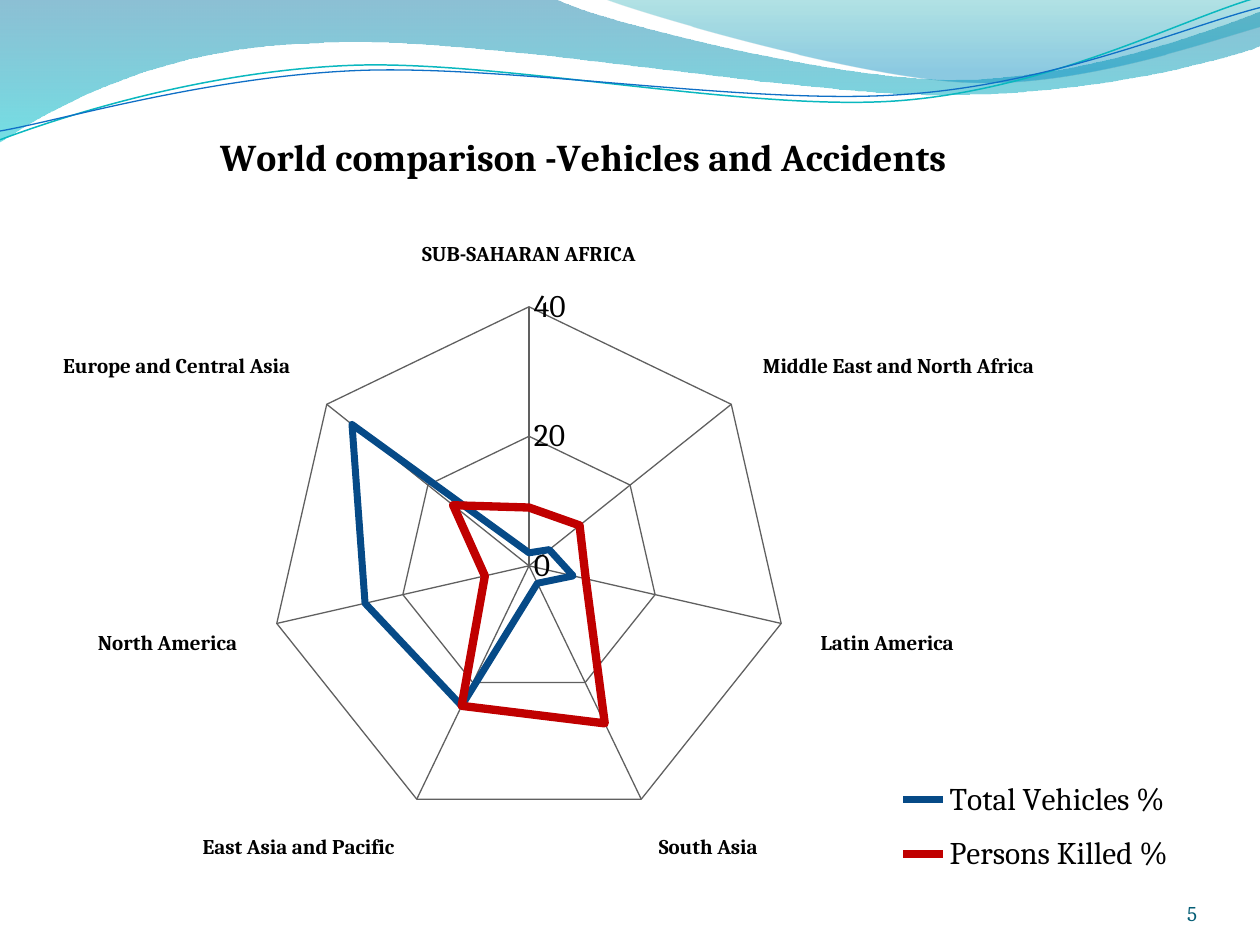
from math import cos, radians, sin
from lxml.etree import SubElement
from pptx import Presentation
from pptx.chart.data import CategoryChartData
from pptx.dml.color import RGBColor
from pptx.enum.chart import XL_CHART_TYPE, XL_LEGEND_POSITION, XL_TICK_MARK
from pptx.enum.text import MSO_ANCHOR, PP_ALIGN
from pptx.oxml import parse_xml
from pptx.oxml.ns import nsdecls, qn
from pptx.util import Cm, Pt

BAND = [(0, 0), (4.4, -0.01), (4.76, 0.17, 6.64, 0.63, 7.58, 0.63),
        (8.53, 0.63, 9.58, 0.26, 10, 0.09), (10.01, 0.36),
        (9.83, 0.44, 8.7, 0.76, 7.46, 0.75), (6.22, 0.75, 3.82, 0.28, 2.57, 0.34),
        (1.29, 0.36, 0.46, 0.83, -0.01, 1.13), (0, 0)]
CREST = [(4.79, -0.01), (5.09, 0.11, 6.82, 0.62, 7.69, 0.65),
         (8.56, 0.69, 9.61, 0.32, 10, 0.21), (10, 0), (4.79, -0.01)]
TEAL = [(0, 1.11), (0.48, 0.93, 1.58, 0.57, 2.77, 0.52),
        (3.95, 0.47, 5.93, 0.89, 7.13, 0.8), (8.33, 0.71, 9.38, 0.15, 9.98, -0.02)]
BLUE = [(0, 1.04), (0.47, 0.96, 1.64, 0.61, 2.83, 0.56),
        (4.03, 0.51, 5.97, 0.84, 7.17, 0.75), (8.36, 0.67, 9.41, 0.21, 10, 0.06)]
AREAS = ["SUB-SAHARAN AFRICA", "Middle East and North Africa ", "Latin America ",
         "South Asia ", "East Asia and Pacific ", "North America",
         "Europe and Central Asia "]
DATA = [("Total Vehicles %", (2, 4, 7, 3, 24, 26, 35), "064A87", 4),
        ("Persons Killed %", (9, 10, 9, 27, 24, 7, 15), "C00000", 4.75)]


def color(code):
    return RGBColor.from_string(code)


def inch(value):
    return Cm(2.54 * value)


def place(node, index, **sizes):
    for old in node.findall(qn("c:layout")):
        node.remove(old)
    layout = parse_xml(f"<c:layout {nsdecls('c')}><c:manualLayout/></c:layout>")
    for tag, value in sizes.items():
        SubElement(layout[0], qn(f"c:{tag}")).set("val", str(value))
    node.insert(index, layout)


class Deck:
    """Hold the style and the current slide."""

    def __init__(self, font="Cambria"):
        self.font = font
        self.show = Presentation()
        self.show.slide_width, self.show.slide_height = Cm(25.4), Cm(19.05)
        self.slide = self.show.slides.add_slide(self.show.slide_layouts[6])

    def style(self, font, size, code="000000", bold=False):
        font.name, font.size, font.bold = self.font, Pt(size), bold
        font.color.rgb = color(code)

    def shape(self, path, box, turn=0, close=False):
        left, top, width, height = box
        pen = self.slide.shapes.build_freeform(inch(left), inch(top))
        pen.add_line_segments([(inch(left + width), inch(top + height))], close=close)
        shape = pen.convert_to_shape()
        shape.shadow.inherit = False
        shape.rotation = turn
        angle = radians(-turn)
        node = next(shape._element.iter(qn("a:path")))
        for old in list(node):
            node.remove(old)
        for index, part in enumerate(path):
            tag = "cubicBezTo" if len(part) == 6 else "lnTo" if index else "moveTo"
            step = SubElement(node, qn(f"a:{tag}"))
            for x, y in zip(part[::2], part[1::2]):
                x, y = x - left - width / 2, y - top - height / 2
                spot = SubElement(step, qn("a:pt"))
                spot.set("x", str(inch(x * cos(angle) - y * sin(angle) + width / 2)))
                spot.set("y", str(inch(x * sin(angle) + y * cos(angle) + height / 2)))
        if close:
            SubElement(node, qn("a:close"))
        return shape

    def wave(self, path, box, stops):
        shape = self.shape(path, box, close=True)
        shape.line.fill.background()
        shape.fill.gradient()
        shape.fill.gradient_angle = 270
        for stop, (spot, code, alpha) in zip(shape.fill.gradient_stops, stops):
            stop.position = spot
            stop.color.rgb = color(code)
            tint = next(stop._gs.iter(qn("a:srgbClr")))
            SubElement(tint, qn("a:alpha")).set("val", str(alpha * 1000))

    def curve(self, path, box, code, width):
        shape = self.shape(path, box, turn=357.3)
        shape.fill.background()
        shape.line.color.rgb = color(code)
        shape.line.width = Pt(width)

    def number(self, text, left, top, width, height):
        frame = self.slide.shapes.add_textbox(
            Cm(left), Cm(top), Cm(width), Cm(height)).text_frame
        frame.word_wrap = True
        frame.vertical_anchor = MSO_ANCHOR.BOTTOM
        frame.margin_left = frame.margin_right = 0
        frame.margin_top = frame.margin_bottom = 0
        frame.text = text
        line = frame.paragraphs[0]
        line.alignment = PP_ALIGN.RIGHT
        self.style(line.runs[0].font, 12, "045D75")

    def radar(self, title, areas, rows, left, top, width, height):
        data = CategoryChartData()
        data.categories = areas
        for name, values, *_ in rows:
            data.add_series(name, values)
        chart = self.slide.shapes.add_chart(
            XL_CHART_TYPE.RADAR, Cm(left), Cm(top), Cm(width), Cm(height), data).chart
        self.style(chart.font, 18)

        frame = chart.chart_title.text_frame
        frame.text = title
        self.style(frame.paragraphs[0].runs[0].font, 21.6, bold=True)
        place(chart.chart_title._element, 1, xMode="edge", yMode="edge", x=0.13, y=-0.01)
        place(chart._chartSpace.chart.plotArea, 0, layoutTarget="inner",
              xMode="edge", yMode="edge", x=0.18, y=0.173, w=0.453, h=0.771)

        chart.has_legend = True
        chart.legend.position = XL_LEGEND_POSITION.RIGHT
        chart.legend.include_in_layout = False
        self.style(chart.legend.font, 18)
        place(chart.legend._element, 1, xMode="edge", yMode="edge",
              x=0.73, y=0.81, w=0.24, h=0.16)

        for axis, size, bold in ((chart.category_axis, 12, True),
                                 (chart.value_axis, 18, False)):
            axis.major_tick_mark = axis.minor_tick_mark = XL_TICK_MARK.NONE
            axis.has_major_gridlines = True
            self.style(axis.tick_labels.font, size, bold=bold)
            for line in (axis.format.line, axis.major_gridlines.format.line):
                line.color.rgb = color("606060")
                line.width = Pt(0.75)
        chart.value_axis.minimum_scale = 0
        chart.value_axis.maximum_scale = 40
        chart.value_axis.major_unit = 20

        for series, (_, _, code, thick) in zip(chart.plots[0].series, rows):
            series.format.line.color.rgb = color(code)
            series.format.line.width = Pt(thick)


def main():
    deck = Deck()
    deck.wave(BAND, (-0.01, -0.01, 10.02, 1.14),
              [(0, "0074A1", 45), (1, "00C6CF", 55)])
    deck.wave(CREST, (4.79, -0.01, 5.21, 0.7),
              [(0, "00A1A9", 30), (0.8, "008BBF", 45)])
    deck.curve(TEAL, (-0.02, 0.22, 10.02, 0.71), "0AB8BF", 0.85)
    deck.curve(BLUE, (-0.02, 0.3, 10.03, 0.58), "0F6FC6", 0.75)
    deck.number("5", 22.02, 17.65, 2.11, 1.02)
    deck.radar("World comparison -Vehicles and Accidents ", AREAS, DATA,
               1.27, 2.54, 23.06, 15.88)
    deck.show.save("out.pptx")


if __name__ == "__main__":
    main()
